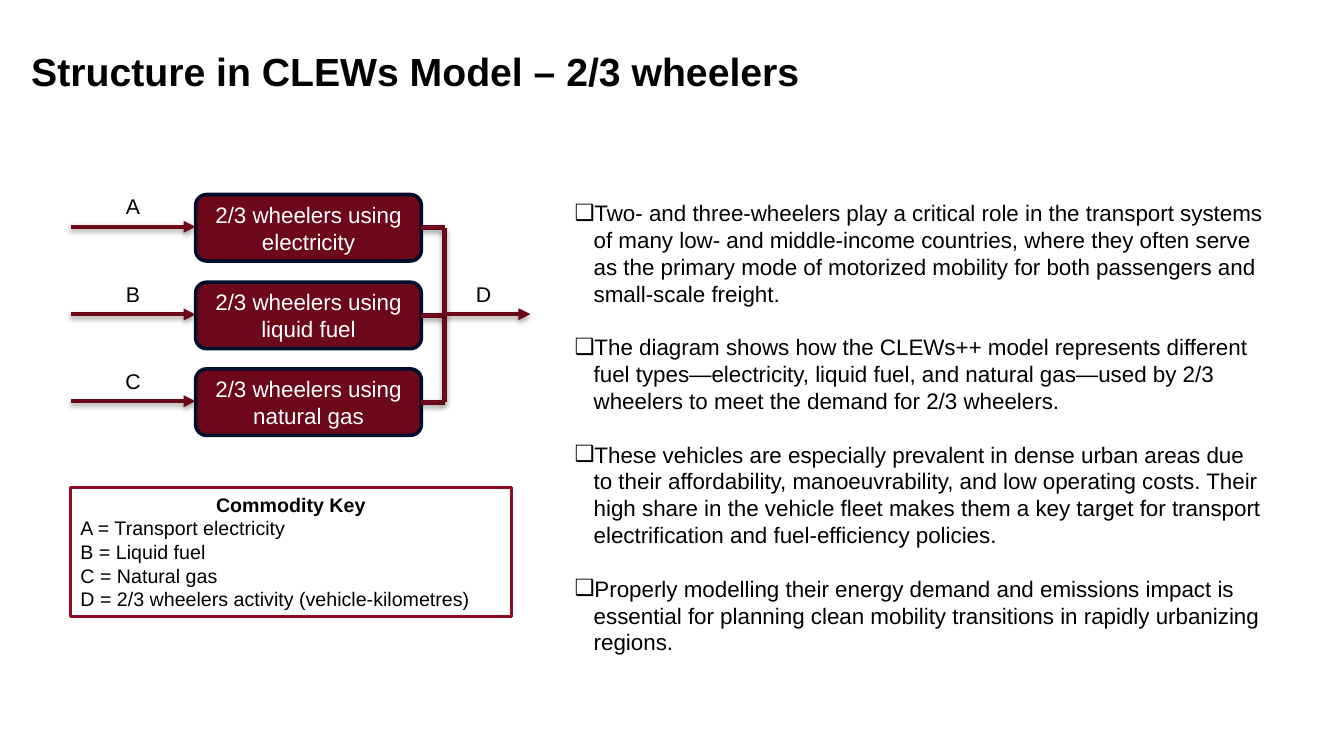
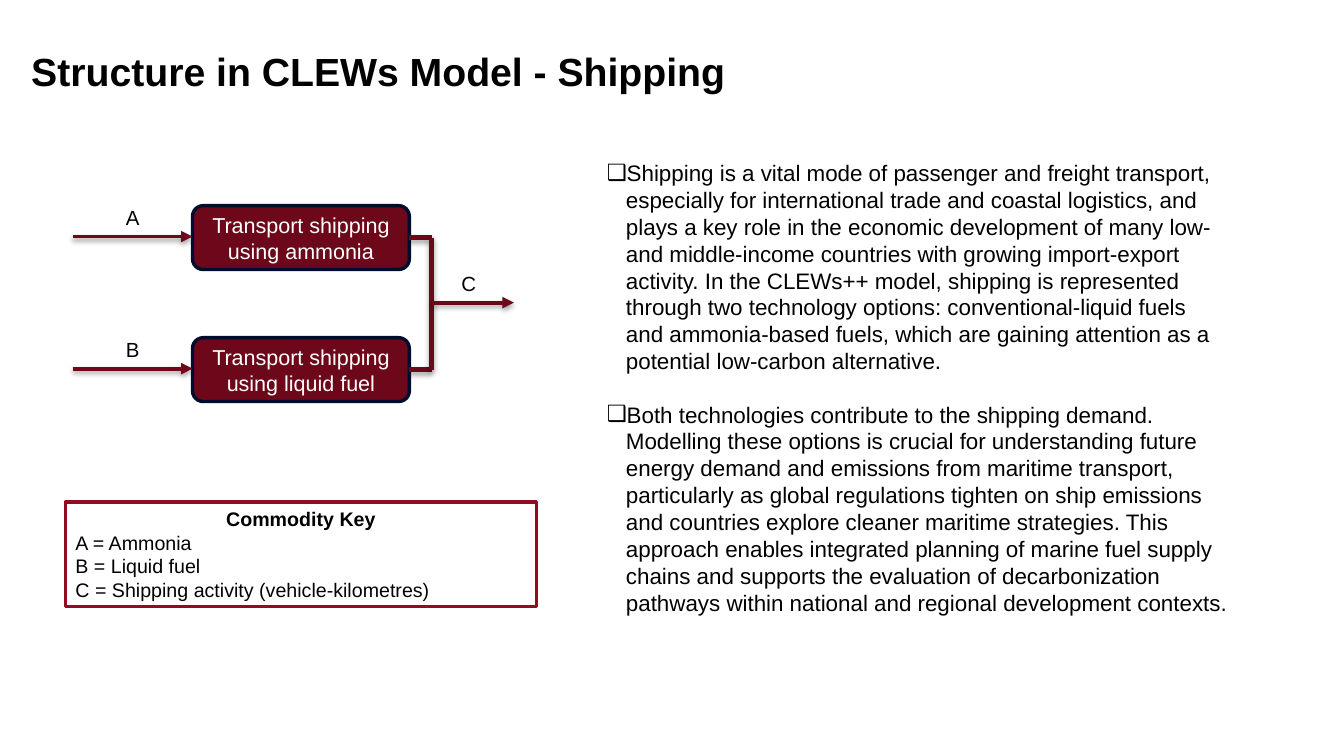
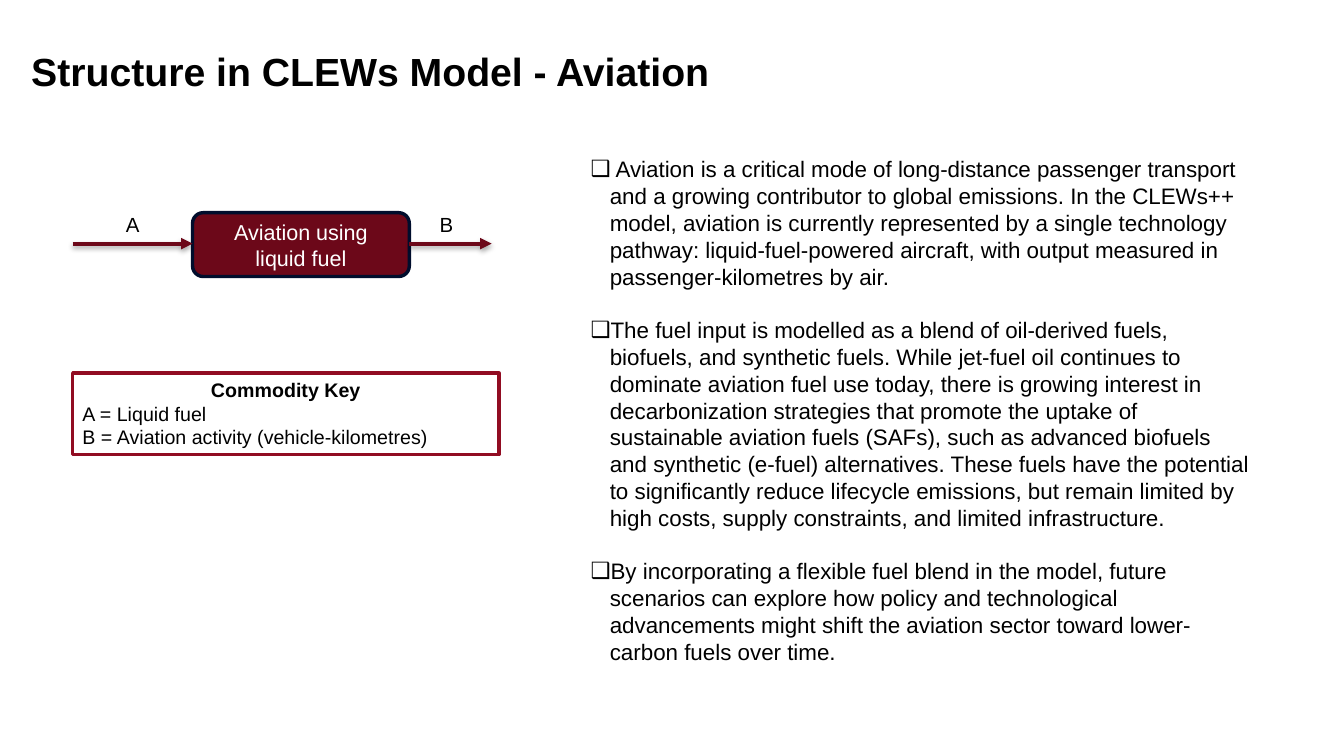
from dataclasses import dataclass

from lxml import etree
from pptx import Presentation
from pptx.dml.color import RGBColor
from pptx.enum.shapes import MSO_CONNECTOR, MSO_SHAPE
from pptx.enum.text import MSO_ANCHOR, PP_ALIGN
from pptx.oxml import parse_xml
from pptx.oxml.ns import nsdecls, qn
from pptx.util import Pt

STRAIGHT = MSO_CONNECTOR.STRAIGHT
ROUND, RECT = MSO_SHAPE.ROUNDED_RECTANGLE, MSO_SHAPE.RECTANGLE
LEFT, CENTER = PP_ALIGN.LEFT, PP_ALIGN.CENTER
TOP, MIDDLE, BOTTOM = MSO_ANCHOR.TOP, MSO_ANCHOR.MIDDLE, MSO_ANCHOR.BOTTOM
PX = 9144  # 100 px to the inch


@dataclass(frozen=True)
class Theme:
    font: str = "Arial"
    ink: str = "000000"
    white: str = "FFFFFF"
    wine: str = "6C0819"
    navy: str = "000D2C"
    frame: str = "910C22"
    title: float = 28
    body: float = 16
    box: float = 16
    label: float = 15.2
    key: float = 14
    gap: float = 19
    edge: float = 2.54
    arrow: float = 2.86
    bar: float = 3.81


THEME = Theme()

# ratio scales the diagram; each node is (label, box text, box top)
SLIDES = [
    dict(
        title="Structure in CLEWs Model – 2/3 wheelers",
        ratio=1, start=70, left=194,
        nodes=[
            ("A", "2/3 wheelers using electricity", 193),
            ("B", "2/3 wheelers using liquid fuel", 280),
            ("C", "2/3 wheelers using natural gas", 366),
        ],
        out="D",
        key=(70, 484, 437, 128),
        terms=[
            "A = Transport electricity",
            "B = Liquid fuel",
            "C = Natural gas",
            "D = 2/3 wheelers activity (vehicle-kilometres)",
        ],
        body=(560, 193, 703, 468),
        points=[
            "Two- and three-wheelers play a critical role in the transport systems of many "
            "low- and middle-income countries, where they often serve as the primary mode of "
            "motorized mobility for both passengers and small-scale freight.",
            "The diagram shows how the CLEWs++ model represents different fuel "
            "types—electricity, liquid fuel, and natural gas—used by 2/3 wheelers to meet "
            "the demand for 2/3 wheelers.",
            "These vehicles are especially prevalent in dense urban areas due to their "
            "affordability, manoeuvrability, and low operating costs. Their high share in the "
            "vehicle fleet makes them a key target for transport electrification and "
            "fuel-efficiency policies.",
            "Properly modelling their energy demand and emissions impact is essential for "
            "planning clean mobility transitions in rapidly urbanizing regions.",
        ],
    ),
    dict(
        title="Structure in CLEWs Model - Shipping",
        ratio=0.96, start=72, left=191,
        nodes=[
            ("A", "Transport shipping using ammonia", 204),
            ("B", "Transport shipping using liquid fuel", 335),
        ],
        out="C",
        key=(65, 498, 467, 104),
        terms=[
            "A = Ammonia",
            "B = Liquid fuel",
            "C = Shipping activity (vehicle-kilometres)",
        ],
        body=(592, 153, 636, 495),
        points=[
            "Shipping is a vital mode of passenger and freight transport, especially for "
            "international trade and coastal logistics, and plays a key role in the economic "
            "development of many low- and middle-income countries with growing import-export "
            "activity. In the CLEWs++ model, shipping is represented through two technology "
            "options: conventional-liquid fuels and ammonia-based fuels, which are gaining "
            "attention as a potential low-carbon alternative.",
            "Both technologies contribute to the shipping demand. Modelling these options is "
            "crucial for understanding future energy demand and emissions from maritime "
            "transport, particularly as global regulations tighten on ship emissions and "
            "countries explore cleaner maritime strategies. This approach enables integrated "
            "planning of marine fuel supply chains and supports the evaluation of "
            "decarbonization pathways within national and regional development contexts.",
        ],
    ),
    dict(
        title="Structure in CLEWs Model - Aviation",
        ratio=0.96, start=72, left=191,
        nodes=[("A", "Aviation using liquid fuel", 211)],
        out="B",
        key=(72, 370, 423, 81),
        terms=["A = Liquid fuel", "B = Aviation activity (vehicle-kilometres)"],
        body=(576, 149, 676, 522),
        points=[
            " Aviation is a critical mode of long-distance passenger transport and a growing "
            "contributor to global emissions. In the CLEWs++ model, aviation is currently "
            "represented by a single technology pathway: liquid-fuel-powered aircraft, with "
            "output measured in passenger-kilometres by air.",
            "The fuel input is modelled as a blend of oil-derived fuels, biofuels, and "
            "synthetic fuels. While jet-fuel oil continues to dominate aviation fuel use "
            "today, there is growing interest in decarbonization strategies that promote the "
            "uptake of sustainable aviation fuels (SAFs), such as advanced biofuels and "
            "synthetic (e-fuel) alternatives. These fuels have the potential to significantly "
            "reduce lifecycle emissions, but remain limited by high costs, supply "
            "constraints, and limited infrastructure.",
            "By incorporating a flexible fuel blend in the model, future scenarios can explore "
            "how policy and technological advancements might shift the aviation sector toward "
            "lower-carbon fuels over time.",
        ],
    ),
]


def write(shape, lines, size, color=THEME.ink, align=LEFT, anchor=TOP, pad=(10, 5)):
    """Fill a shape with one paragraph per line, all in one style."""
    frame = shape.text_frame
    frame.word_wrap = True
    frame.vertical_anchor = anchor
    frame.margin_left = frame.margin_right = round(pad[0] * PX)
    frame.margin_top = frame.margin_bottom = round(pad[1] * PX)
    frame.text = "\n".join(lines)
    for para in frame.paragraphs:
        para.alignment = align
        for run in para.runs:
            run.font.name = THEME.font
            run.font.size = Pt(size)
            run.font.color.rgb = RGBColor.from_string(color)
    return frame.paragraphs


def link(slide, ends, weight, ratio, head=False):
    """Draw a shadowed line between (x1, y1, x2, y2)."""
    line = slide.shapes.add_connector(STRAIGHT, *[round(v * PX) for v in ends])
    line.line.color.rgb = RGBColor.from_string(THEME.wine)
    line.line.width = Pt(weight * ratio)
    if head:
        stroke = line.line._get_or_add_ln()
        etree.SubElement(stroke, qn("a:tailEnd"), type="triangle")
    line._element.spPr.append(parse_xml(
        f'<a:effectLst {nsdecls("a")}>'
        f'<a:outerShdw blurRad="{Pt(4 * ratio)}" dist="{Pt(2 * ratio)}" '
        'dir="5400000" rotWithShape="0">'
        f'<a:srgbClr val="{THEME.ink}"><a:alpha val="37000"/></a:srgbClr>'
        '</a:outerShdw></a:effectLst>'))


deck = Presentation()
deck.slide_width, deck.slide_height = 1333 * PX, 750 * PX

for data in SLIDES:
    slide = deck.slides.add_slide(deck.slide_layouts[5])
    shapes = slide.shapes

    title = shapes.title
    title.left, title.top, title.width, title.height = [v * PX for v in (21, -22, 1270, 121)]
    head = write(title, [data["title"]], THEME.title, anchor=BOTTOM)[0]
    head.line_spacing = 0.9
    head.runs[0].font.bold = True

    body = shapes.add_textbox(*[v * PX for v in data["body"]])
    for i, para in enumerate(write(body, data["points"], THEME.body)):
        props = para._p.get_or_add_pPr()
        props.set("marL", str(19 * PX))
        props.set("indent", str(-22 * PX))
        tint = etree.SubElement(props, qn("a:buClr"))
        etree.SubElement(tint, qn("a:srgbClr"), val=THEME.ink)
        etree.SubElement(props, qn("a:buFont"), typeface=THEME.font)
        etree.SubElement(props, qn("a:buChar"), char="❑")
        if i:
            para.space_before = Pt(THEME.gap)

    ratio, start, left = data["ratio"], data["start"], data["left"]
    nodes = data["nodes"]
    wide, high = 224 * ratio, 66 * ratio
    right = left + wide
    pad = (13 * ratio, 6 * ratio)
    rows = [top + 32 * ratio for _, _, top in nodes]
    mid = sum(rows) / len(rows)
    join = right + 23 * ratio if len(nodes) > 1 else right
    end = join + 85 * ratio

    for (_, name, top), row in zip(nodes, rows):
        box = shapes.add_shape(ROUND, *[round(v * PX) for v in (left, top, wide, high)])
        box.shadow.inherit = False
        box.fill.solid()
        box.fill.fore_color.rgb = RGBColor.from_string(THEME.wine)
        box.line.color.rgb = RGBColor.from_string(THEME.navy)
        box.line.width = Pt(THEME.edge * ratio)
        write(box, [name], THEME.box * ratio, THEME.white, CENTER, MIDDLE, pad)
        link(slide, (start, row, left, row), THEME.arrow, ratio, head=True)
        if join > right:
            link(slide, (join, row + 1, right, row + 1), THEME.bar, ratio)
    if join > right:
        link(slide, (join, rows[0] + 1, join, rows[-1] + 1), THEME.bar, ratio)
    link(slide, (join, mid, end, mid), THEME.arrow, ratio, head=True)

    # each label stands on its arrow
    marks = [(node[0], (start + left) / 2, row) for node, row in zip(nodes, rows)]
    marks.append((data["out"], (join + end) / 2 - 4, mid))
    wide, high = 91 * ratio, 39 * ratio
    for mark, x, y in marks:
        place = (x - wide / 2, y - high, wide, high)
        label = shapes.add_textbox(*[round(v * PX) for v in place])
        write(label, [mark], THEME.label * ratio, align=CENTER, pad=pad)

    key = shapes.add_shape(RECT, *[v * PX for v in data["key"]])
    key.shadow.inherit = False
    key.fill.background()
    key.line.color.rgb = RGBColor.from_string(THEME.frame)
    key.line.width = Pt(2.25)
    head = write(key, ["Commodity Key", *data["terms"]], THEME.key)[0]
    head.alignment = CENTER
    head.runs[0].font.bold = True

deck.save("out.pptx")
